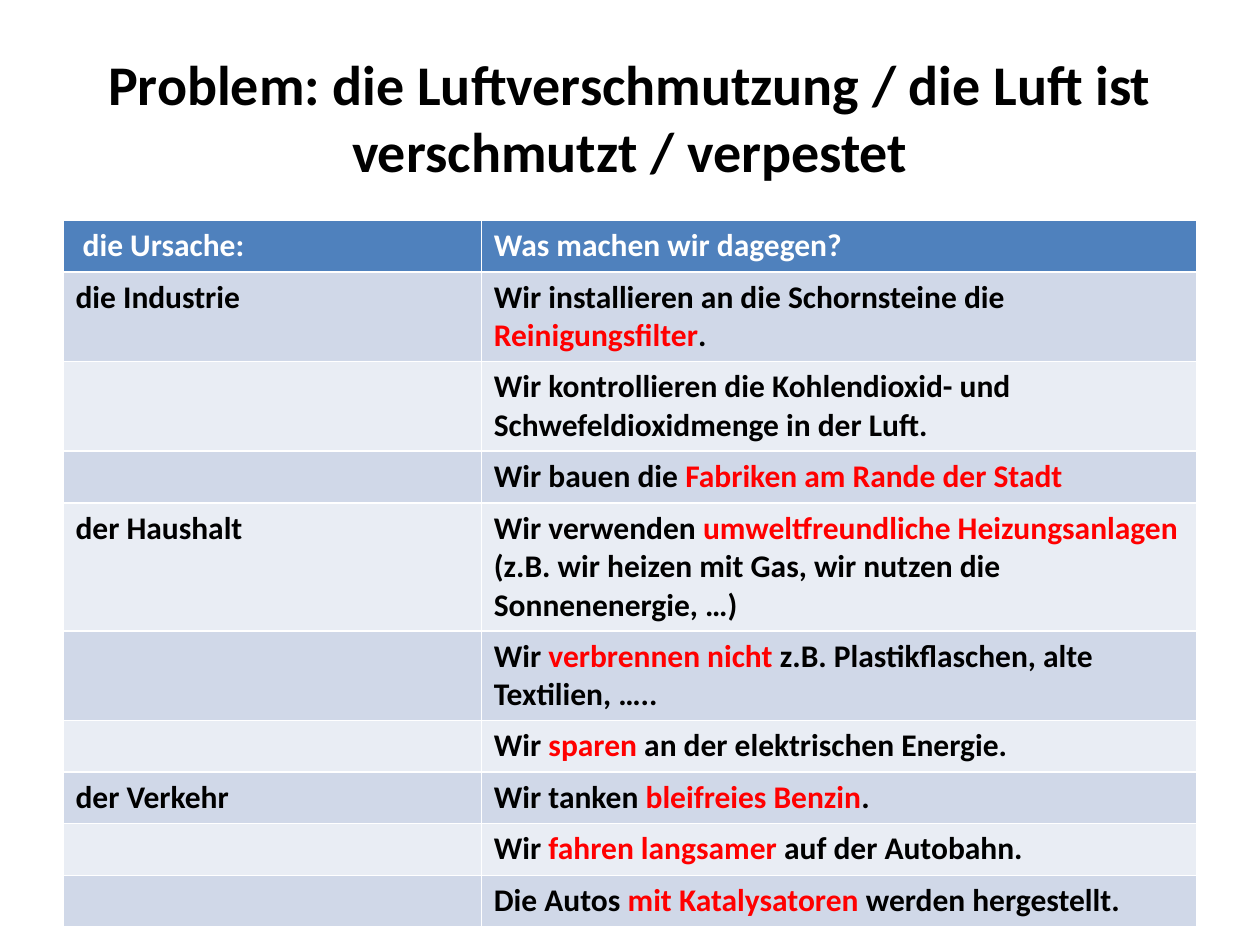
from dataclasses import dataclass

import pptx
import pptx.dml.color
import pptx.enum.text
import pptx.util

Inches = pptx.util.Inches

FONT = "Calibri"
BLACK, WHITE, RED = "000000", "FFFFFF", "FF0000"
HEADER_FILL = "4F81BD"
BAND_FILLS = ("D0D8E8", "E9EDF4")
COLUMN_WIDTHS = (3.32, 5.68)
ROW_HEIGHT = 0.41


@dataclass
class Measure:
    """A table row; words between asterisks in the action are highlighted."""
    cause: str
    action: str


HEADER = Measure(" die Ursache:", "Was machen wir dagegen?")
MEASURES = [
    Measure("die Industrie", "Wir installieren an die Schornsteine die *Reinigungsfilter*."),
    Measure("", "Wir kontrollieren die Kohlendioxid- und Schwefeldioxidmenge in der Luft."),
    Measure("", "Wir bauen die *Fabriken am Rande der Stadt*"),
    Measure("der Haushalt", "Wir verwenden *umweltfreundliche Heizungsanlagen* "
                            "(z.B. wir heizen mit Gas, wir nutzen die Sonnenenergie, …)"),
    Measure("", "Wir *verbrennen nicht* z.B. Plastikflaschen, alte Textilien, ….."),
    Measure("", "Wir *sparen* an der elektrischen Energie."),
    Measure("der Verkehr", "Wir tanken *bleifreies Benzin*."),
    Measure("", "Wir *fahren langsamer* auf der Autobahn."),
    Measure("", "Die Autos *mit Katalysatoren* werden hergestellt."),
]


def rgb(color: str) -> pptx.dml.color.RGBColor:
    return pptx.dml.color.RGBColor.from_string(color)


def write_text(text_frame, text: str, *, size: float = 18, color: str = BLACK,
               align=pptx.enum.text.PP_ALIGN.LEFT) -> None:
    """Write bold text, with the parts between asterisks in red."""
    paragraph = text_frame.paragraphs[0]
    paragraph.alignment = align
    for index, part in enumerate(text.split("*")):
        if not part:
            continue
        run = paragraph.add_run()
        run.text = part
        run.font.name = FONT
        run.font.size = pptx.util.Pt(size)
        run.font.bold = True
        run.font.color.rgb = rgb(RED if index % 2 else color)


def fill_row(table, row: int, measure: Measure, fill: str, color: str) -> None:
    table.rows[row].height = Inches(ROW_HEIGHT)
    for column, text in enumerate((measure.cause, measure.action)):
        cell = table.cell(row, column)
        cell.fill.solid()
        cell.fill.fore_color.rgb = rgb(fill)
        write_text(cell.text_frame, text, color=color)


def add_title(slide, text: str) -> None:
    title = slide.shapes.title
    title.left, title.top = Inches(0.5), Inches(0.3)
    title.width, title.height = Inches(9), Inches(1.25)
    title.text_frame.vertical_anchor = pptx.enum.text.MSO_ANCHOR.MIDDLE
    write_text(title.text_frame, text, size=32, align=pptx.enum.text.PP_ALIGN.CENTER)


def add_measures_table(slide) -> None:
    row_count = len(MEASURES) + 1
    table = slide.shapes.add_table(
        row_count, len(COLUMN_WIDTHS), Inches(0.5), Inches(1.75),
        Inches(sum(COLUMN_WIDTHS)), Inches(row_count * ROW_HEIGHT)).table
    for column, width in zip(table.columns, COLUMN_WIDTHS):
        column.width = Inches(width)
    fill_row(table, 0, HEADER, HEADER_FILL, WHITE)
    for index, measure in enumerate(MEASURES):
        fill_row(table, index + 1, measure, BAND_FILLS[index % 2], BLACK)


def main() -> None:
    presentation = pptx.Presentation()
    presentation.slide_width, presentation.slide_height = Inches(10), Inches(7.5)
    title_only = presentation.slide_layouts[5]
    slide = presentation.slides.add_slide(title_only)

    # Heading
    add_title(slide, "Problem: die Luftverschmutzung / die Luft ist verschmutzt / verpestet")

    # Causes and countermeasures
    add_measures_table(slide)

    presentation.save("out.pptx")


if __name__ == "__main__":
    main()
